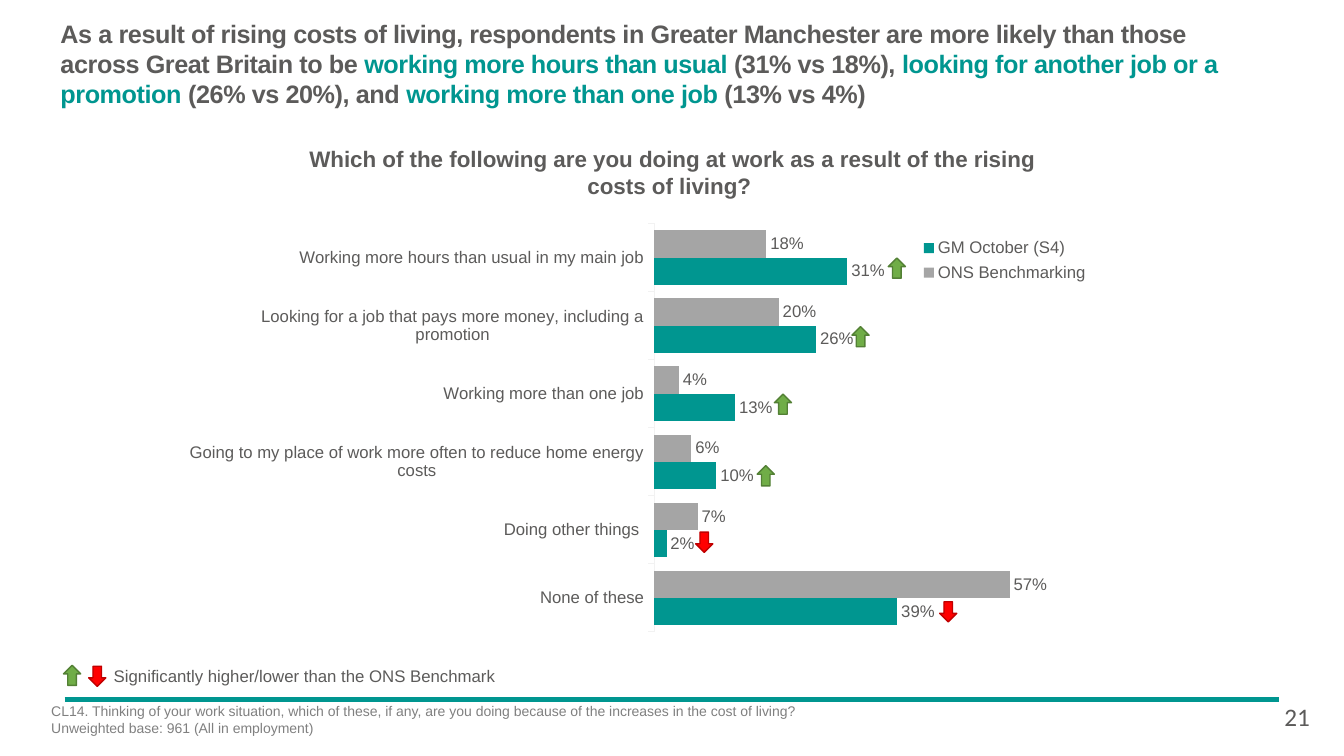
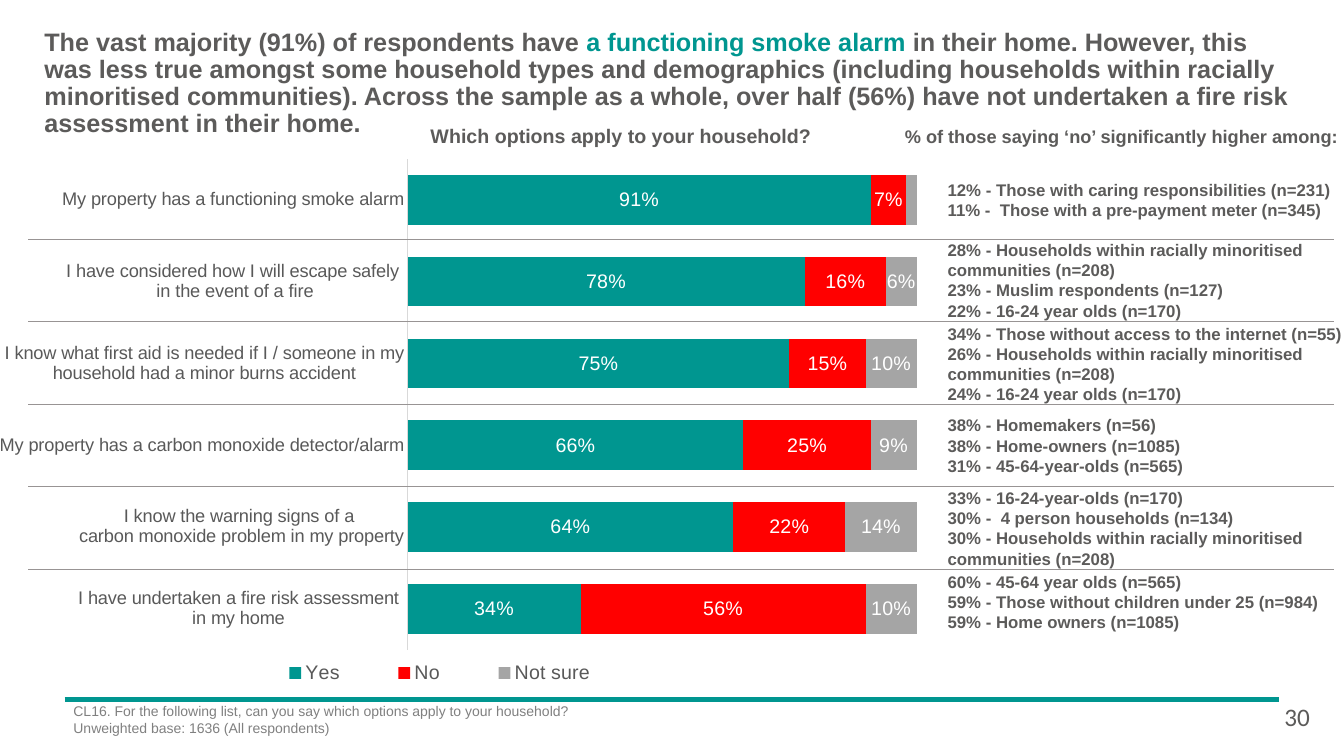
from lxml import etree
from pptx import Presentation
from pptx.chart.data import CategoryChartData
from pptx.dml.color import RGBColor
from pptx.enum.chart import XL_CHART_TYPE as CT, XL_LABEL_POSITION as LP
from pptx.enum.chart import XL_LEGEND_POSITION as LEG, XL_TICK_MARK as TICK
from pptx.enum.shapes import MSO_CONNECTOR, MSO_SHAPE
from pptx.enum.text import MSO_ANCHOR, MSO_AUTO_SIZE, PP_ALIGN
from pptx.oxml.ns import qn
from pptx.util import Pt

PX = 9144  # 100 px to the inch
C = {k: RGBColor.from_string(v) for k, v in {
    "teal": "009690", "text": "5C5B5A", "axis": "595959", "note": "808080",
    "grey": "A5A5A5", "rule": "989494", "red": "FF0000", "dark_red": "C00000",
    "green": "70AD47", "dark_green": "538035", "white": "FFFFFF",
    "pale": "F2F2F2", "light": "D9D9D9"}.items()}


def add_text(s, box, lines, size, color="text", bold=False, align=PP_ALIGN.LEFT,
             font="Arial", margins=True):
    tf = s.shapes.add_textbox(*[v * PX for v in box]).text_frame
    tf.word_wrap = True
    if not margins:
        tf.margin_left = tf.margin_right = tf.margin_top = tf.margin_bottom = 0
    tf.text = "\n".join(lines)
    for p in tf.paragraphs:
        p.alignment = align
        f = p.runs[0].font
        f.size, f.name, f.bold, f.color.rgb = Pt(size), font, bold, C[color]


def make_layout(x, y, w, h, inner=False):
    layout = etree.Element(qn("c:layout"))
    manual = etree.SubElement(layout, qn("c:manualLayout"))
    parts = [("layoutTarget", "inner")] if inner else []
    parts += [("xMode", "edge"), ("yMode", "edge"), ("x", x), ("y", y), ("w", w), ("h", h)]
    for tag, val in parts:
        etree.SubElement(manual, qn("c:" + tag)).set("val", str(val))
    return layout


pages = [
    {"title": [("As a result of rising costs of living, respondents in Greater Manchester are "
                "more likely than those across Great Britain to be ", "text"),
               ("working more hours than usual ", "teal"), ("(31% vs 18%), ", "text"),
               ("looking for another job or a promotion ", "teal"),
               ("(26% vs 20%), and ", "text"), ("working more than one job ", "teal"),
               ("(13% vs 4%)", "text")],
     "title_box": (60, 18, 1150, 91), "title_spacing": 1.0, "tracking": -30,
     "heading": "Which of the following are you doing at work as a result of the rising "
                "costs of living? ",
     "heading_box": (304, 144, 726, 54), "heading_size": 16,
     "note": ["CL14. Thinking of your work situation, which of these, if any, are you doing "
              "because of the increases in the cost of living?",
              "Unweighted base: 961 (All in employment)"],
     "note_left": 41, "number": "21",
     "chart": {
         "type": CT.BAR_CLUSTERED, "box": (188, 218, 903, 424), "gap": 50, "overlap": 0,
         "plot": (0.508, 0.009, 0.413, 0.956), "max": 0.6,
         "cats": ["Working more hours than usual in my main job",
                  "Looking for a job that pays more money, including a promotion",
                  "Working more than one job",
                  "Going to my place of work more often to reduce home energy costs",
                  "Doing other things ", "None of these"],
         "series": [("ONS Benchmarking", "grey", (.18, .2, .04, .06, .07, .57)),
                    ("GM October (S4)", "teal", (.31, .26, .13, .1, .02, .39))],
         "label": (LP.OUTSIDE_END, 12, "text"),
         "axis": (12, "text", "pale", TICK.OUTSIDE),
         "legend": (LEG.RIGHT, 12, "text", (0.8, 0.03, 0.19, 0.13))}},
    {"title": [("The vast majority (91%) of respondents have ", "text"),
               ("a functioning smoke alarm ", "teal"),
               ("in their home. However, this was less true amongst some household types and "
                "demographics (including households within racially minoritised communities). "
                "Across the sample as a whole, over half (56%) have not undertaken a fire risk "
                "assessment in their home.", "text")],
     "title_box": (44, 29, 1243, 85), "title_spacing": 0.9, "tracking": 0,
     "heading": "Which options apply to your household?",
     "heading_box": (260, 123, 712, 24), "heading_size": 14,
     "note": ["CL16. For the following list, can you say which options apply to your household?",
              "Unweighted base: 1636 (All respondents)"],
     "note_left": 63, "number": "30",
     "chart": {
         "type": CT.BAR_STACKED_100, "box": (-2, 155, 913, 537), "gap": 65, "overlap": 100,
         "plot": (0.445, 0.005, 0.553, 0.907), "max": 1,
         "cats": ["My property has a functioning smoke alarm",
                  "I have considered how I will escape safely \nin the event of a fire",
                  "I know what first aid is needed if I / someone in my household had a minor "
                  "burns accident",
                  "My property has a carbon monoxide detector/alarm",
                  "I know the warning signs of a \ncarbon monoxide problem in my property",
                  "I have undertaken a fire risk assessment \nin my home "],
         "series": [("Yes", "teal", (.91, .78, .75, .66, .64, .34)),
                    ("No", "red", (.07, .16, .15, .25, .22, .56)),
                    ("Not sure", "grey", (.02, .06, .1, .09, .14, .1))],
         "label": (LP.CENTER, 14, "white"),
         "axis": (13, "axis", "light", TICK.NONE),
         "legend": (LEG.BOTTOM, 14, "axis", (0.26, 0.92, 0.44, 0.07))}},
]

prs = Presentation()
prs.slide_width, prs.slide_height = 1333 * PX, 750 * PX
title_only = prs.slide_layouts[5]

for page in pages:
    s = prs.slides.add_slide(title_only)

    # Title with highlighted phrases
    sp = s.shapes.title
    sp.left, sp.top, sp.width, sp.height = [v * PX for v in page["title_box"]]
    tf = sp.text_frame
    tf.word_wrap, tf.auto_size = True, MSO_AUTO_SIZE.NONE
    tf.vertical_anchor = MSO_ANCHOR.TOP
    tf.margin_left = tf.margin_right = tf.margin_top = tf.margin_bottom = 0
    p = tf.paragraphs[0]
    p.alignment, p.line_spacing = PP_ALIGN.LEFT, page["title_spacing"]
    for text, color in page["title"]:
        r = p.add_run()
        r.text = text
        r.font.size, r.font.name, r.font.bold = Pt(18), "Arial", True
        r.font.color.rgb = C[color]
        r._r.get_or_add_rPr().set("spc", str(page["tracking"]))

    # Chart heading, footnote and page number
    add_text(s, page["heading_box"], [page["heading"]], page["heading_size"], bold=True,
             align=PP_ALIGN.CENTER, margins=False)
    add_text(s, (page["note_left"], 692, 1198, 56), page["note"], 10, "note")
    add_text(s, (1264, 691, 53, 40), [page["number"]], 18, font="Calibri")

    # Chart data and bars
    spec = page["chart"]
    data = CategoryChartData(number_format="0%")
    data.categories = spec["cats"]
    for name, color, values in spec["series"]:
        data.add_series(name, values)
    box = [v * PX for v in spec["box"]]
    chart = s.shapes.add_chart(spec["type"], *box, data).chart
    chart.has_title = False
    chart.font.name, chart.font.size = "Arial", Pt(12)
    plot = chart.plots[0]
    plot.gap_width, plot.overlap, plot.vary_by_categories = spec["gap"], spec["overlap"], False
    position, size, label_color = spec["label"]
    for series, (name, color, values) in zip(plot.series, spec["series"]):
        series.format.fill.solid()
        series.format.fill.fore_color.rgb = C[color]
        labels = series.data_labels
        labels.show_value, labels.position = True, position
        labels.number_format, labels.number_format_is_linked = "0%", False
        labels.font.size, labels.font.name = Pt(size), "Arial"
        labels.font.color.rgb = C[label_color]

    # Axes
    size, color, line_color, tick = spec["axis"]
    axis = chart.category_axis
    axis.reverse_order = True
    axis.has_major_gridlines = False
    axis.major_tick_mark, axis.minor_tick_mark = tick, TICK.NONE
    axis.format.line.color.rgb, axis.format.line.width = C[line_color], Pt(0.75)
    font = axis.tick_labels.font
    font.size, font.name, font.color.rgb = Pt(size), "Arial", C[color]
    axis = chart.value_axis
    axis.visible = axis.has_major_gridlines = False
    axis.minimum_scale, axis.maximum_scale = 0, spec["max"]

    # Legend and plot placement
    position, size, color, legend_box = spec["legend"]
    chart.has_legend = True
    legend = chart.legend
    legend.position, legend.include_in_layout = position, False
    legend.font.size, legend.font.name, legend.font.color.rgb = Pt(size), "Arial", C[color]
    for old in chart.element.xpath(".//c:plotArea/c:layout | .//c:legend/c:layout"):
        old.getparent().remove(old)
    chart.element.xpath(".//c:plotArea")[0].insert(0, make_layout(*spec["plot"], inner=True))
    chart.element.xpath(".//c:legend/c:overlay")[0].addprevious(make_layout(*legend_box))

work, home = prs.slides

# Work slide: significance arrows and their key
add_text(work, (103, 656, 420, 30), ["Significantly higher/lower than the ONS Benchmark"], 12)
arrows = [(63, 660, "up"), (88, 661, "down"), (881, 256, "up"), (845, 324, "up"),
          (768, 391, "up"), (751, 462, "up"), (690, 528, "down"), (932, 597, "down")]
for x, y, direction in arrows:
    sp = work.shapes.add_shape(MSO_SHAPE.DOWN_ARROW, x * PX, y * PX, 17 * PX, 20 * PX)
    up = direction == "up"
    sp.rotation = 180 if up else 0
    sp.shadow.inherit = False
    sp.fill.solid()
    sp.fill.fore_color.rgb = C["green" if up else "red"]
    sp.line.color.rgb, sp.line.width = C["dark_green" if up else "dark_red"], Pt(1)

# Home slide: no label on the narrowest bar segment
labels = chart.element.xpath(".//c:ser/c:dLbls")[-1]
hidden = etree.Element(qn("c:dLbl"))
etree.SubElement(hidden, qn("c:idx")).set("val", "0")
etree.SubElement(hidden, qn("c:delete")).set("val", "1")
labels.insert(0, hidden)

# Home slide: groups more likely to say no
add_text(home, (864, 119, 496, 32), ["% of those saying ‘no’ significantly higher among:"], 13,
         bold=True, align=PP_ALIGN.CENTER)
minoritised = "Households within racially minoritised communities (n=208)"
groups = [
    (173, ["12% - Those with caring responsibilities (n=231)",
           "11% -  Those with a pre-payment meter (n=345)"]),
    (233, ["28% - " + minoritised, "23% - Muslim respondents (n=127)",
           "22% - 16-24 year olds (n=170)"]),
    (316, ["34% - Those without access to the internet (n=55)", "26% - " + minoritised,
           "24% - 16-24 year olds (n=170)"]),
    (407, ["38% - Homemakers (n=56)", "38% - Home-owners (n=1085)",
           "31% - 45-64-year-olds (n=565)"]),
    (479, ["33% - 16-24-year-olds (n=170)", "30% -  4 person households (n=134)",
           "30% - " + minoritised]),
    (562, ["60% - 45-64 year olds (n=565)", "59% - Those without children under 25 (n=984)",
           "59% - Home owners (n=1085)"]),
]
for top, lines in groups:
    add_text(home, (930, top, 418, 20 * len(lines) + 10), lines, 12, bold=True)

# Row dividers, and the footer rule that moves to the shared layout
rules = [(28, 237 + 82 * i, 1323, "rule", 0.5) for i in range(5)]
rules.append((64, 694, 1269, "teal", 3))
for x1, y, x2, color, width in rules:
    rule = home.shapes.add_connector(MSO_CONNECTOR.STRAIGHT, x1 * PX, y * PX, x2 * PX, y * PX)
    rule.line.color.rgb, rule.line.width = C[color], Pt(width)
    etree.SubElement(rule.element.spPr, qn("a:effectLst"))
title_only.shapes.element.append(rule.element)

prs.save("out.pptx")
